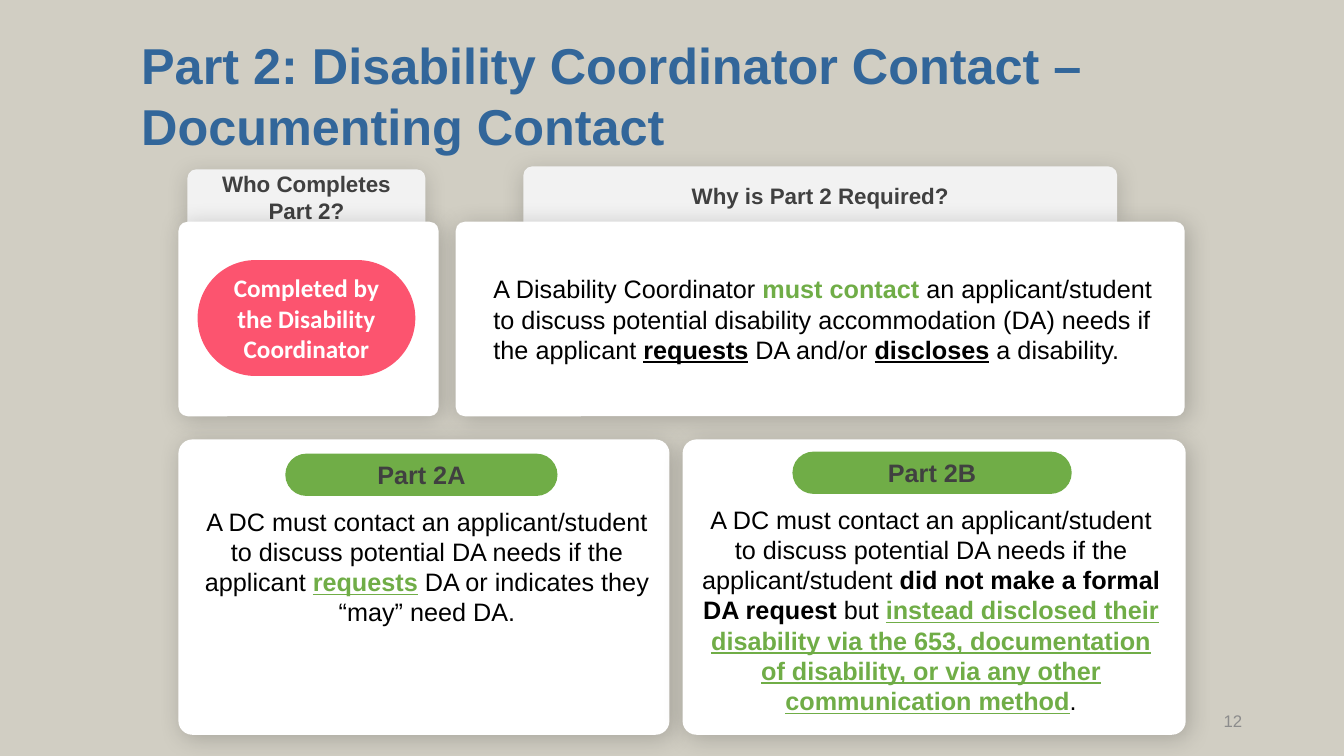
import pptx
import pptx.util
import pptx.dml.color
import pptx.enum.shapes
import pptx.enum.text
import pptx.oxml
import pptx.oxml.ns
from dataclasses import dataclass

Inches = pptx.util.Inches
ShapeKind = pptx.enum.shapes.MSO_SHAPE
Align = pptx.enum.text.PP_ALIGN
Anchor = pptx.enum.text.MSO_ANCHOR


@dataclass(frozen=True)
class Theme:
    background: str = "D1CEC3"
    title: str = "32669A"
    tab: str = "F2F2F2"
    card: str = "FFFFFF"
    ink: str = "000000"
    label: str = "404040"
    green: str = "70AD47"
    pink: str = "FC546F"
    muted: str = "8C8C8C"
    title_size: int = 36
    body_size: int = 18
    tab_size: int = 16
    number_size: int = 12
    font: str = "Arial"
    badge_font: str = "Calibri"


THEME = Theme()
BOLD = {"bold": True}
KEY = {"bold": True, "underline": True}
GREEN_KEY = {"bold": True, "underline": True, "color": THEME.green}


def rgb(value):
    return pptx.dml.color.RGBColor.from_string(value)


def write_text(shape, runs, size=THEME.body_size, color=THEME.ink, font=THEME.font,
               bold=False, align=Align.LEFT, anchor=Anchor.MIDDLE, indent=0):
    frame = shape.text_frame
    frame.word_wrap = True
    frame.vertical_anchor = anchor
    paragraph = frame.paragraphs[0]
    paragraph.alignment = align
    if indent:
        paragraph._p.get_or_add_pPr().set("marL", str(Inches(indent)))
    for text, style in runs:
        run = paragraph.add_run()
        run.text = text
        run.font.name = font
        run.font.size = pptx.util.Pt(size)
        run.font.bold = style.get("bold", bold)
        run.font.underline = style.get("underline", False)
        run.font.color.rgb = rgb(style.get("color", color))


def add_shadow(shape, opacity, blur, distance, angle):
    effects = shape._element.spPr.find(pptx.oxml.ns.qn("a:effectLst"))
    effects.append(pptx.oxml.parse_xml(
        f'<a:outerShdw {pptx.oxml.ns.nsdecls("a")} blurRad="{pptx.util.Pt(blur)}" '
        f'dist="{pptx.util.Pt(distance)}" dir="{angle * 60000}" algn="ctr" rotWithShape="0">'
        f'<a:srgbClr val="{THEME.ink}"><a:alpha val="{opacity * 1000}"/></a:srgbClr>'
        '</a:outerShdw>'))


def add_box(slide, kind, box, fill, radius=None):
    shape = slide.shapes.add_shape(kind, *map(Inches, box))
    shape.shadow.inherit = False
    shape.fill.solid()
    shape.fill.fore_color.rgb = rgb(fill)
    shape.line.fill.background()
    if radius is not None:
        shape.adjustments[0] = radius
    return shape


def add_card(slide, box):
    card = add_box(slide, ShapeKind.ROUNDED_RECTANGLE, box, THEME.card, 0.047)
    add_shadow(card, 20, 17, 3, 45)
    return card


def add_pill(slide, box, fill, text, color, font=THEME.font):
    pill = add_box(slide, ShapeKind.ROUNDED_RECTANGLE, box, fill, 0.5)
    write_text(pill, [(text, BOLD)], color=color, font=font, align=Align.CENTER)


def add_text_box(slide, box, runs, **text_format):
    write_text(slide.shapes.add_textbox(*map(Inches, box)), runs, **text_format)


def add_title(slide, box, text):
    title = slide.shapes.title
    title.left, title.top, title.width, title.height = map(Inches, box)
    write_text(title, [(text, BOLD)], size=THEME.title_size, color=THEME.title,
               anchor=Anchor.TOP)


def add_tabbed_card(slide, box, tab_offset, tab_width, tab_height, heading):
    left, top, width, height = box
    tab_box = (left + tab_offset, top - tab_height, tab_width, tab_height)
    tab = add_box(slide, ShapeKind.ROUND_2_SAME_RECTANGLE, tab_box, THEME.tab)
    add_shadow(tab, 17, 16, 3, 90)
    write_text(tab, [(heading, BOLD)], size=THEME.tab_size, color=THEME.label,
               align=Align.CENTER)
    return add_card(slide, box)


def add_who_region(slide, box):
    left, top, width, height = box
    add_tabbed_card(slide, box, 0.09, 2.36, 0.52, "Who Completes Part 2?")
    add_pill(slide, (left + 0.19, top + 0.38, 2.16, 1.15), THEME.pink,
             "Completed by the Disability Coordinator", THEME.card, THEME.badge_font)


def add_why_region(slide, box):
    card = add_tabbed_card(slide, box, 0.67, 5.89, 0.55, "Why is Part 2 Required?")
    write_text(card, [
        ("A Disability Coordinator ", {}),
        ("must contact ", {"bold": True, "color": THEME.green}),
        ("an applicant/student to discuss potential disability accommodation (DA) "
         "needs if the applicant ", {}),
        ("requests", KEY),
        (" DA and/or ", {}),
        ("discloses", KEY),
        (" a disability.", {}),
    ], indent=0.25)


def add_part_region(slide, box, heading, pill_offset, pill_width, pill_drop, runs):
    left, top, width, height = box
    add_card(slide, box)
    add_pill(slide, (left + pill_offset, top + pill_drop, pill_width, 0.42),
             THEME.green, heading, THEME.label)
    add_text_box(slide, (left, top + pill_drop + 0.47, 4.87, height - pill_drop - 0.47),
                 runs, align=Align.CENTER, anchor=Anchor.TOP, indent=0.06)


def add_page_number(slide, box, number):
    add_text_box(slide, box, [(number, {})], size=THEME.number_size, color=THEME.muted,
                 align=Align.RIGHT)


def main():
    presentation = pptx.Presentation()
    presentation.slide_width = Inches(13.33)
    presentation.slide_height = Inches(7.5)
    slide = presentation.slides.add_slide(presentation.slide_layouts[5])
    slide.background.fill.solid()
    slide.background.fill.fore_color.rgb = rgb(THEME.background)

    add_title(slide, (1.3, 0.29, 10.15, 1.31),
              "Part 2: Disability Coordinator Contact – Documenting Contact")
    add_who_region(slide, (1.77, 2.2, 2.58, 1.93))
    add_why_region(slide, (4.52, 2.2, 7.23, 1.93))
    add_part_region(slide, (1.77, 4.36, 4.87, 2.93), "Part 2A", 1.06, 2.7, 0.14, [
        ("A DC must contact an applicant/student to discuss potential DA needs "
         "if the applicant ", {}),
        ("requests", GREEN_KEY),
        (" DA or indicates they “may” need DA.", {}),
    ])
    add_part_region(slide, (6.77, 4.36, 4.99, 2.93), "Part 2B", 1.09, 2.77, 0.12, [
        ("A DC must contact an applicant/student to discuss potential DA needs "
         "if the applicant/student ", {}),
        ("did not make a formal DA request ", BOLD),
        ("but ", {}),
        ("instead disclosed their disability via the 653, documentation of disability, "
         "or via any other communication method", GREEN_KEY),
        (".", {}),
    ])
    add_page_number(slide, (9.42, 6.95, 3, 0.4), "12")
    presentation.save("out.pptx")


if __name__ == "__main__":
    main()
